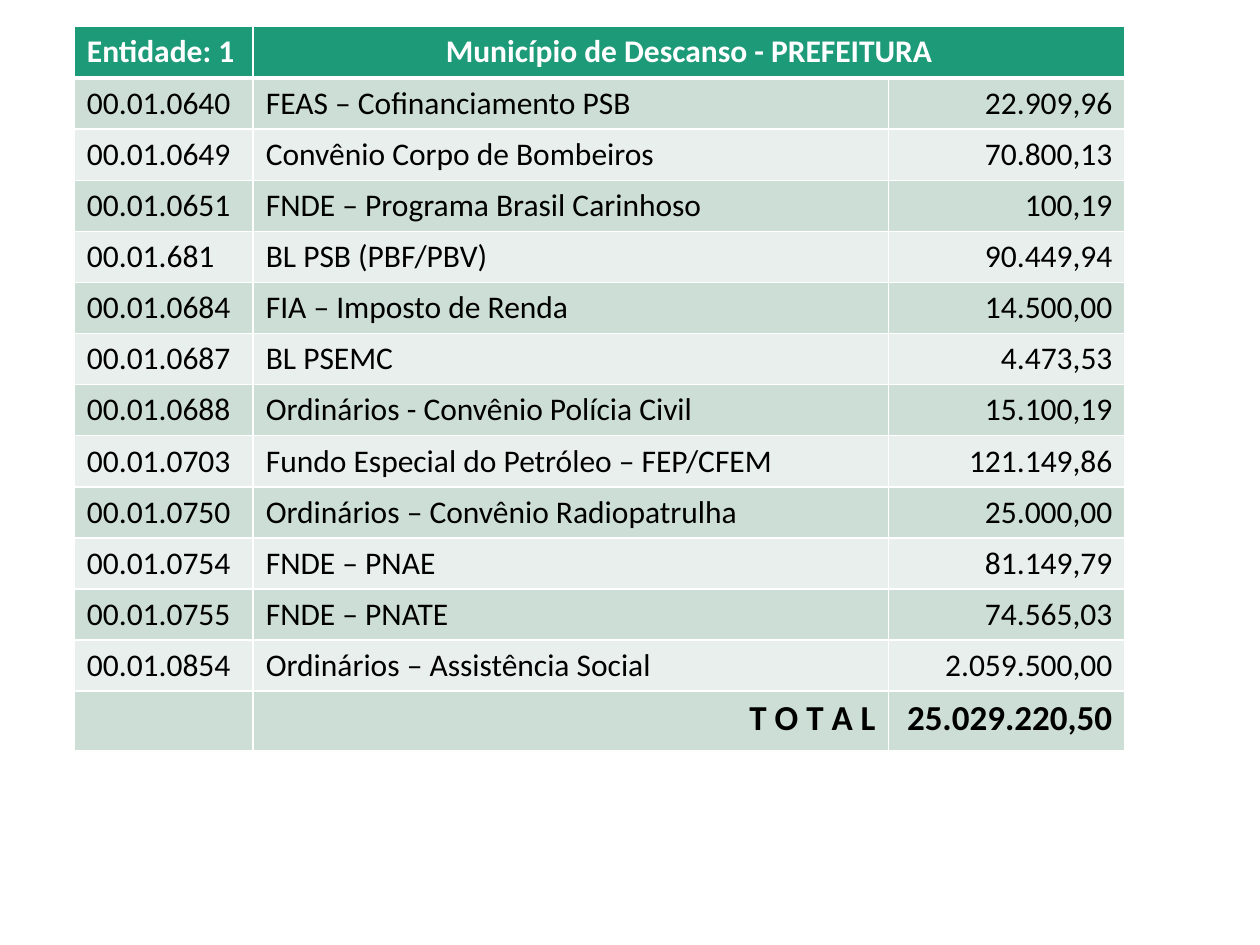
from dataclasses import dataclass
from typing import NamedTuple

import lxml.etree
import pptx
import pptx.dml.color
import pptx.enum.text
import pptx.oxml.ns
import pptx.util

Inches = pptx.util.Inches
Align = pptx.enum.text.PP_ALIGN


@dataclass(frozen=True)
class Theme:
    font: str = "Calibri"
    body_size: int = 18
    total_size: int = 20
    header_fill: str = "1D9A78"
    header_text: str = "FFFFFF"
    body_text: str = "000000"
    bands: tuple[str, str] = ("CDDED6", "E8EFEC")
    border: str = "FFFFFF"
    thin: int = 1
    thick: int = 3


class Entry(NamedTuple):
    code: str
    source: str
    amount: str


THEME = Theme()
COLUMN_WIDTHS = (1.42, 5.04, 1.88)
HEADER_HEIGHT, ENTRY_HEIGHT, TOTAL_HEIGHT = 0.41, 0.4, 0.47
ALIGNMENTS = (Align.LEFT, Align.LEFT, Align.RIGHT)
HEADER = ("Entidade: 1", "Município de Descanso - PREFEITURA", "")
ENTRIES = (
    Entry("00.01.0640", "FEAS – Cofinanciamento PSB", "22.909,96"),
    Entry("00.01.0649", "Convênio Corpo de Bombeiros", "70.800,13"),
    Entry("00.01.0651", "FNDE – Programa Brasil Carinhoso", "100,19"),
    Entry("00.01.681", "BL PSB (PBF/PBV)", "90.449,94"),
    Entry("00.01.0684", "FIA – Imposto de Renda", "14.500,00"),
    Entry("00.01.0687", "BL PSEMC", "4.473,53"),
    Entry("00.01.0688", "Ordinários - Convênio Polícia Civil", "15.100,19"),
    Entry("00.01.0703", "Fundo Especial do Petróleo – FEP/CFEM", "121.149,86"),
    Entry("00.01.0750", "Ordinários – Convênio Radiopatrulha", "25.000,00"),
    Entry("00.01.0754", "FNDE – PNAE", "81.149,79"),
    Entry("00.01.0755", "FNDE – PNATE", "74.565,03"),
    Entry("00.01.0854", "Ordinários – Assistência Social", "2.059.500,00"),
)
TOTAL = Entry("", "T O T A L", "25.029.220,50")


def rgb(color: str) -> pptx.dml.color.RGBColor:
    return pptx.dml.color.RGBColor.from_string(color)


def write_text(cell, text: str, *, size: int = THEME.body_size,
               color: str = THEME.body_text, bold: bool = False,
               align: Align = Align.LEFT) -> None:
    if not text:
        return
    para = cell.text_frame.paragraphs[0]
    para.alignment = align
    span = para.add_run()
    span.text = text
    span.font.name = THEME.font
    span.font.size = pptx.util.Pt(size)
    span.font.bold = bold
    span.font.color.rgb = rgb(color)


def paint_cell(cell, fill: str, *, top: int = THEME.thin,
               bottom: int = THEME.thin) -> None:
    cell.fill.solid()
    cell.fill.fore_color.rgb = rgb(fill)
    properties = cell._tc.get_or_add_tcPr()
    qn = pptx.oxml.ns.qn
    sides = (("L", THEME.thin), ("R", THEME.thin), ("T", top), ("B", bottom))
    for position, (side, width) in enumerate(sides):
        line = lxml.etree.Element(qn(f"a:ln{side}"), w=str(pptx.util.Pt(width)))
        solid = lxml.etree.SubElement(line, qn("a:solidFill"))
        lxml.etree.SubElement(solid, qn("a:srgbClr"), val=THEME.border)
        properties.insert(position, line)


def fill_header(table) -> None:
    for column, text in enumerate(HEADER):
        cell = table.cell(0, column)
        paint_cell(cell, THEME.header_fill, bottom=THEME.thick)
        write_text(cell, text, color=THEME.header_text, bold=True,
                   align=Align.CENTER if column else Align.LEFT)
    table.cell(0, 1).merge(table.cell(0, 2))


def fill_entry(table, row: int, entry: Entry) -> None:
    is_total = entry is TOTAL
    for column, text in enumerate(entry):
        cell = table.cell(row, column)
        paint_cell(cell, THEME.bands[(row - 1) % 2],
                   top=THEME.thick if row == 1 else THEME.thin)
        write_text(cell, text, bold=is_total,
                   size=THEME.total_size if is_total else THEME.body_size,
                   align=Align.RIGHT if is_total else ALIGNMENTS[column])


def add_budget_table(page) -> None:
    heights = (HEADER_HEIGHT, *[ENTRY_HEIGHT] * len(ENTRIES), TOTAL_HEIGHT)
    table = page.shapes.add_table(
        len(heights), len(COLUMN_WIDTHS), Inches(0.59), Inches(0.21),
        Inches(sum(COLUMN_WIDTHS)), Inches(sum(heights))).table
    for column, width in zip(table.columns, COLUMN_WIDTHS):
        column.width = Inches(width)
    for row, height in zip(table.rows, heights):
        row.height = Inches(height)
    fill_header(table)
    for row, entry in enumerate((*ENTRIES, TOTAL), start=1):
        fill_entry(table, row, entry)


def main() -> None:
    deck = pptx.Presentation()
    deck.slide_width, deck.slide_height = Inches(10), Inches(7.5)
    page = deck.slides.add_slide(deck.slide_layouts.get_by_name("Blank"))
    add_budget_table(page)
    deck.save("out.pptx")


if __name__ == "__main__":
    main()
